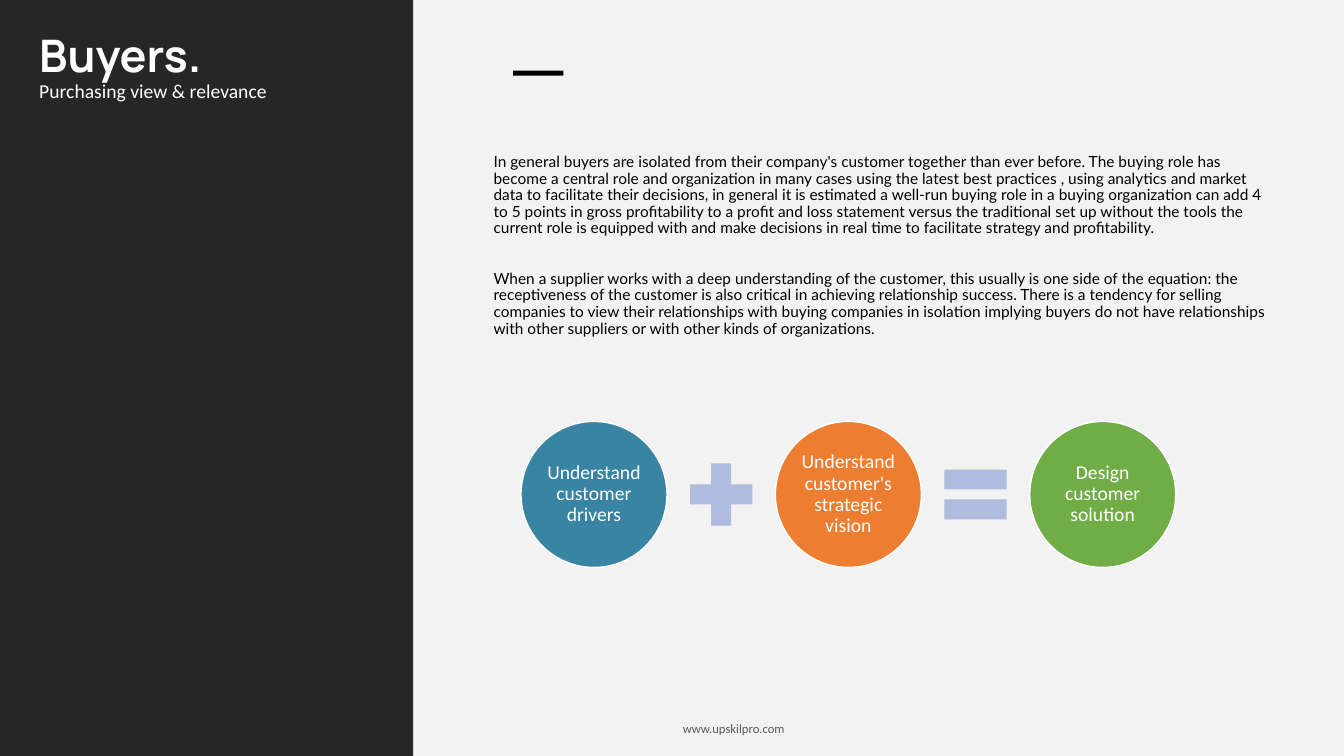
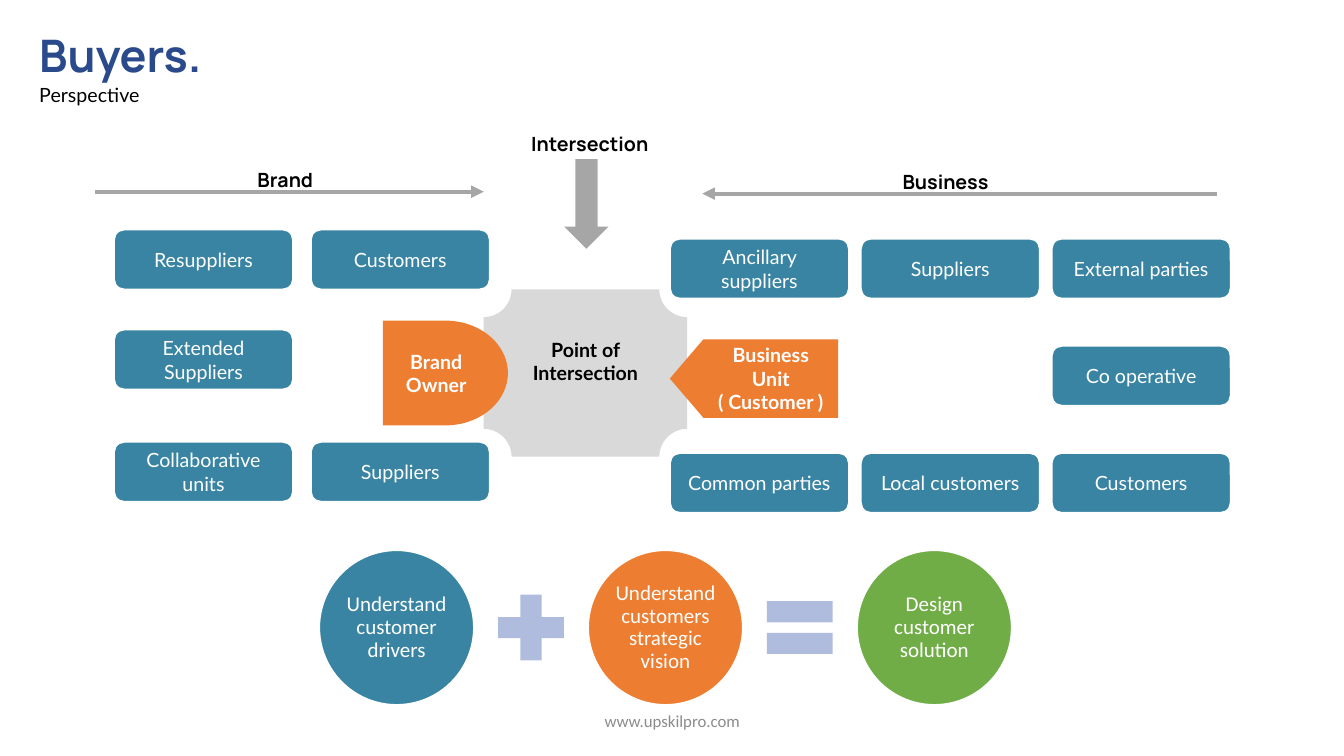
from lxml import etree
from pptx import Presentation
from pptx.dml.color import RGBColor
from pptx.enum.shapes import MSO_CONNECTOR, MSO_SHAPE
from pptx.enum.text import MSO_ANCHOR, PP_ALIGN
from pptx.oxml.ns import qn
from pptx.util import Cm, Pt

RECT, CARD, CIRCLE = MSO_SHAPE.RECTANGLE, MSO_SHAPE.ROUNDED_RECTANGLE, MSO_SHAPE.OVAL
PLUS, EQUAL = MSO_SHAPE.MATH_PLUS, MSO_SHAPE.MATH_EQUAL
PLAQUE, DOWN_ARROW = MSO_SHAPE.PLAQUE, MSO_SHAPE.DOWN_ARROW
DELAY, OFFPAGE = MSO_SHAPE.FLOWCHART_DELAY, MSO_SHAPE.FLOWCHART_OFFPAGE_CONNECTOR
STRAIGHT = MSO_CONNECTOR.STRAIGHT
LEFT, CENTER = PP_ALIGN.LEFT, PP_ALIGN.CENTER
TOP, MIDDLE = MSO_ANCHOR.TOP, MSO_ANCHOR.MIDDLE

WHITE, BLACK = "FFFFFF", "000000"
TEAL, ORANGE, GREEN = "3984A3", "ED7D31", "70AD47"
NAVY, LILAC, GRAY = "2A4A8B", "B0BCDE", "A6A6A6"
PALE, LIGHT, DARK = "F2F2F2", "D9D9D9", "262626"
HEAD, BODY, PLAIN = "Manrope", "Lato", "Calibri"


def rgb(value):
    return RGBColor.from_string(value)


class Deck:
    """Holds the presentation, its style and the current slide."""

    def __init__(self):
        self.prs = Presentation()
        self.prs.slide_width, self.prs.slide_height = Cm(33.87), Cm(19.05)
        self.s = None

    def slide(self):
        self.s = self.prs.slides.add_slide(self.prs.slide_layouts[6])

    def style(self, p, size, color, font, bold=False):
        for r in p.runs:
            r.font.size, r.font.name, r.font.bold = Pt(size), font, bold
            r.font.color.rgb = rgb(color)

    def fill_text(self, sp, text, size=14, color=WHITE, font=BODY, bold=False,
                  align=CENTER, anchor=MIDDLE, spacing=None, after=0):
        tf = sp.text_frame
        tf.word_wrap, tf.vertical_anchor = True, anchor
        tf.text = text
        for p in tf.paragraphs:
            p.alignment, p.line_spacing, p.space_after = align, spacing, Pt(after)
            self.style(p, size, color, font, bold)
        return tf

    def shape(self, kind, x, y, w, h, fill, line=None):
        sp = self.s.shapes.add_shape(kind, Cm(x), Cm(y), Cm(w), Cm(h))
        sp.shadow.inherit = False
        sp.fill.solid()
        sp.fill.fore_color.rgb = rgb(fill)
        if line:
            sp.line.color.rgb = rgb(line)
            sp.line.width = Pt(1)
        else:
            sp.line.fill.background()
        return sp

    def text(self, x, y, w, h, text, **style):
        sp = self.s.shapes.add_textbox(Cm(x), Cm(y), Cm(w), Cm(h))
        return self.fill_text(sp, text, **style)

    def title(self, subtitle, width, color, sub_color, sub_font, spacing):
        tf = self.text(0.74, 0.58, width, 2.24, "Buyers.\n" + subtitle, size=32,
                       color=color, font=HEAD, bold=True, align=LEFT, anchor=TOP)
        p = tf.paragraphs[1]
        p.line_spacing = spacing
        self.style(p, 14, sub_color, sub_font)

    def footer(self, x, y, w, h, size, color):
        self.text(x, y, w, h, "www.upskilpro.com", size=size, color=color, font=PLAIN)

    def label(self, x, y, w, text):
        tf = self.text(x, y, w, 0.86, text, color=BLACK, font=HEAD, bold=True)
        tf.word_wrap = False

    def card(self, x, y, text):
        self.fill_text(self.shape(CARD, x, y, 4.5, 1.5, TEAL, WHITE), text)

    def arrow(self, x1, x2, y):
        c = self.s.shapes.add_connector(STRAIGHT, Cm(x1), Cm(y), Cm(x2), Cm(y))
        c.line.color.rgb = rgb(GRAY)
        c.line.width = Pt(3)
        props = c._element.spPr
        etree.SubElement(props.find(qn("a:ln")), qn("a:tailEnd"), type="triangle")
        etree.SubElement(props, qn("a:effectLst"))

    def equation(self, x, y, d, size, vision):
        pitch, sign = 1.742 * d, 0.58 * d
        terms = [("Understand customer drivers", TEAL), (vision, ORANGE),
                 ("Design customer solution", GREEN)]
        for i, (text, fill) in enumerate(terms):
            sp = self.shape(CIRCLE, x + i * pitch, y, d, d, fill, WHITE)
            tf = self.fill_text(sp, text, size=size, font=PLAIN, spacing=0.9)
            tf.margin_left = tf.margin_right = Cm(0.05)
            tf.margin_top = tf.margin_bottom = Cm(0.05)
        for i, kind in enumerate((PLUS, EQUAL)):
            sx = x + i * pitch + (d + pitch - sign) / 2
            self.shape(kind, sx, y + (d - sign) / 2, sign, sign, LILAC)


def relevance(deck):
    deck.slide()
    deck.shape(RECT, 10.4, 0, 23.47, 19.05, PALE)
    deck.shape(RECT, 0, 0, 10.41, 19.05, DARK)
    deck.shape(RECT, 12.93, 1.78, 1.27, 0.13, BLACK)
    deck.footer(16.18, 17.93, 4.62, 0.86, 9, "595959")
    deck.text(12.19, 3.76, 20.24, 5.77, "\n".join([
        "In general buyers are isolated from their company's customer together than ever "
        "before. The buying role has become a central role and organization in many cases "
        "using the latest best practices , using analytics and market data to facilitate "
        "their decisions, in general it is estimated a well-run buying role in a buying "
        "organization can add 4 to 5 points in gross profitability to a profit and loss "
        "statement versus the traditional set up without the tools the current role is "
        "equipped with and make decisions in real time to facilitate strategy and "
        "profitability.",
        "When a supplier works with a deep understanding of the customer, this usually is "
        "one side of the equation: the receptiveness of the customer is also critical in "
        "achieving relationship success. There is a tendency for selling companies to view "
        "their relationships with buying companies in isolation implying buyers do not "
        "have relationships with other suppliers or with other kinds of organizations.",
    ]), size=11, color=BLACK, align=LEFT, anchor=TOP, spacing=0.9, after=24)
    deck.title("Purchasing view & relevance", 9.65, WHITE, WHITE, PLAIN, 0.9)
    deck.equation(13.13, 10.62, 3.68, 14, "Understand customer's strategic vision")


def perspective(deck):
    deck.slide()
    plaque = deck.shape(PLAQUE, 12.19, 7.29, 5.13, 4.22, LIGHT)
    tf = deck.fill_text(plaque, "Point of Intersection", color=BLACK, bold=True, anchor=TOP)
    tf.margin_top = Cm(0.72)

    brand_rows = [(5.79, ["Resuppliers", "Customers"]), (8.31, ["Extended Suppliers"]),
                  (11.14, ["Collaborative units", "Suppliers"])]
    for y, names in brand_rows:
        for col, name in enumerate(names):
            deck.card(2.88 + 4.96 * col, y, name)
    business_rows = [["Ancillary suppliers", "Suppliers", "External parties"],
                     [None, None, "Co operative"],
                     ["Common parties", "Local customers", "Customers"]]
    for row, names in enumerate(business_rows):
        for col, name in enumerate(names):
            if name:
                deck.card(16.89 + 4.81 * col, 6.02 + 2.7 * row, name)

    owner = deck.shape(DELAY, 9.65, 8.08, 3.15, 2.64, ORANGE)
    deck.fill_text(owner, "Brand Owner", bold=True)
    unit = deck.shape(OFFPAGE, 18.01, 7.42, 1.98, 4.24, ORANGE)
    unit.rotation = 90
    tf = deck.fill_text(unit, "Business Unit\n( Customer )", bold=True)
    tf._txBody.bodyPr.set("vert", "vert270")

    deck.label(6.1, 4.09, 2.18, "Brand")
    deck.label(22.38, 4.14, 2.9, "Business")
    deck.label(13.11, 3.2, 3.51, "Intersection")
    deck.arrow(30.66, 17.7, 4.88)
    deck.arrow(2.39, 12.19, 4.83)
    deck.shape(DOWN_ARROW, 14.22, 4.01, 1.12, 2.26, GRAY)

    deck.equation(8.05, 13.87, 3.89, 15, "Understand customers strategic vision")
    deck.title("Perspective", 17.81, NAVY, BLACK, BODY, 1.07)
    deck.footer(11.23, 17.65, 11.43, 1.02, 12, "8C8C8C")


def main():
    deck = Deck()
    relevance(deck)
    perspective(deck)
    deck.prs.save("out.pptx")


if __name__ == "__main__":
    main()
